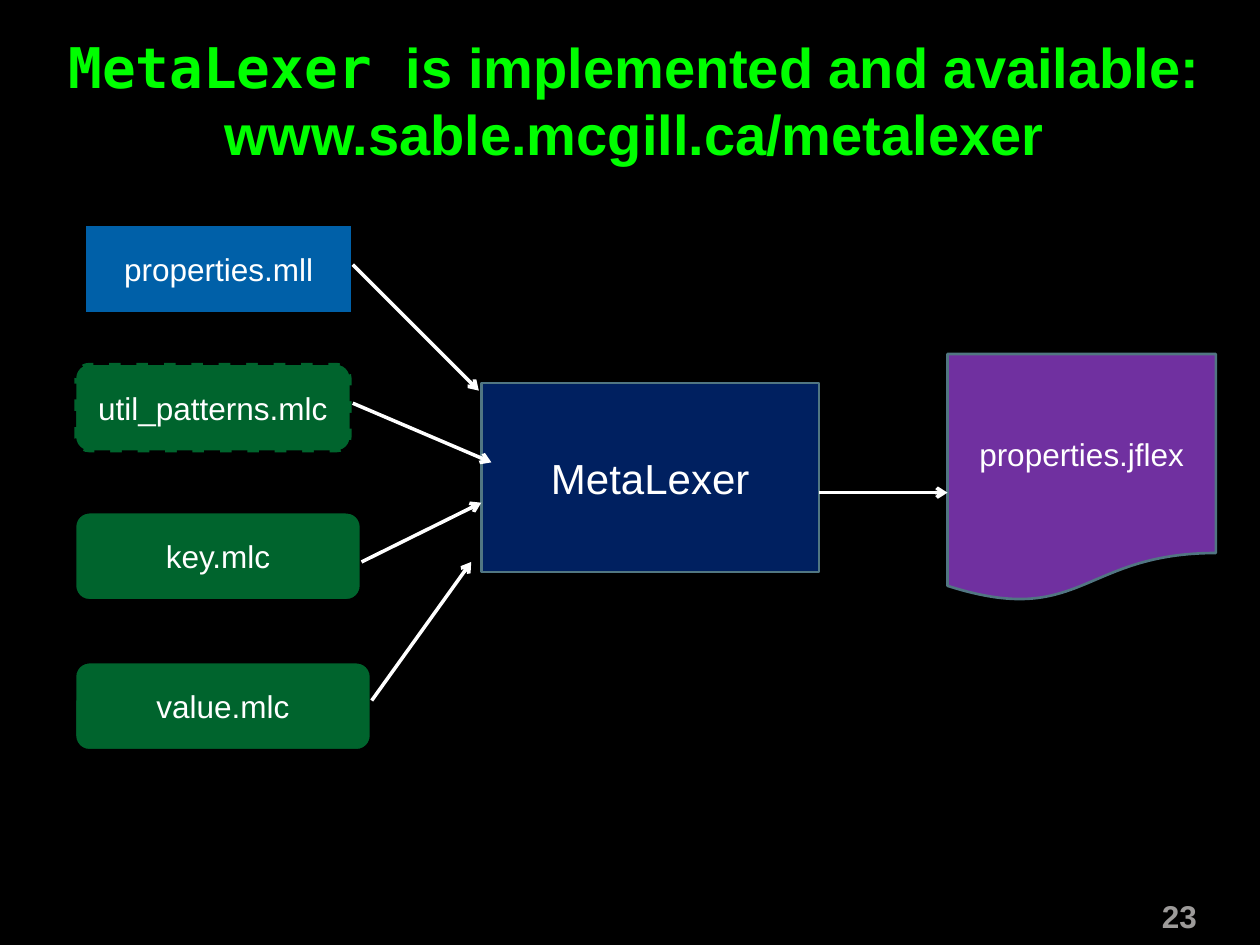
from dataclasses import dataclass

from lxml import etree
from pptx import Presentation
from pptx.dml.color import RGBColor
from pptx.enum.dml import MSO_LINE
from pptx.enum.shapes import MSO_CONNECTOR, MSO_SHAPE
from pptx.enum.text import MSO_ANCHOR, MSO_AUTO_SIZE, PP_ALIGN
from pptx.oxml.ns import qn
from pptx.util import Inches, Pt

RECTANGLE = MSO_SHAPE.RECTANGLE
ROUNDED = MSO_SHAPE.ROUNDED_RECTANGLE
PROCESS = MSO_SHAPE.FLOWCHART_PROCESS
DOCUMENT = MSO_SHAPE.FLOWCHART_DOCUMENT
STRAIGHT = MSO_CONNECTOR.STRAIGHT
DASH = MSO_LINE.DASH
CENTER, RIGHT = PP_ALIGN.CENTER, PP_ALIGN.RIGHT
TOP, MIDDLE, BOTTOM = MSO_ANCHOR.TOP, MSO_ANCHOR.MIDDLE, MSO_ANCHOR.BOTTOM
GROW = MSO_AUTO_SIZE.SHAPE_TO_FIT_TEXT

# The slide is a grid of square cells
COLUMNS, ROWS = 100, 75
CELL = Inches(0.1)


@dataclass(frozen=True)
class Theme:
    font: str = "Arial"
    code_font: str = "DejaVu Sans Mono"
    background: str = "000000"
    title: str = "00FF00"
    page_number: str = "9D9B9A"
    text: str = "FFFFFF"
    layout_file: str = "0060A8"
    component_file: str = "00642D"
    tool: str = "002060"
    output_file: str = "7030A0"
    outline: str = "517682"
    title_size: int = 32
    tool_size: int = 24
    label_size: int = 18
    input_border: float = 2.25
    border: float = 1.5
    arrow: float = 2


THEME = Theme()


def color(value):
    return RGBColor.from_string(value)


def cells(*counts):
    return [round(count * CELL) for count in counts]


def style(paragraph, size, ink, align=CENTER, bold=False):
    paragraph.alignment = align
    font = paragraph.font
    font.name, font.size, font.bold = THEME.font, Pt(size), bold
    font.color.rgb = color(ink)


def add_text_area(slide, area, anchor):
    frame = slide.shapes.add_textbox(*cells(*area)).text_frame
    frame.word_wrap = True
    frame.vertical_anchor = anchor
    return frame


def add_title(slide, name, claim, address):
    frame = add_text_area(slide, (3.5, 2.1, 93.7, 11.8), TOP)
    frame.auto_size = GROW
    headline, link = frame.paragraphs[0], frame.add_paragraph()
    for line in (headline, link):
        style(line, THEME.title_size, THEME.title, bold=True)
    tool_name = headline.add_run()
    tool_name.text = name
    tool_name.font.name = THEME.code_font
    headline.add_run().text = claim
    link.text = address


def add_page_number(slide, number):
    frame = add_text_area(slide, (86.7, 70.2, 8.3, 4), BOTTOM)
    frame.margin_left = frame.margin_right = 0
    frame.margin_top = frame.margin_bottom = 0
    frame.text = number
    style(frame.paragraphs[0], THEME.label_size, THEME.page_number, RIGHT, True)


def add_box(slide, kind, area, label, fill, outline=THEME.outline,
            border=THEME.border, size=THEME.label_size):
    box = slide.shapes.add_shape(kind, *cells(*area))
    box.shadow.inherit = False
    box.fill.solid()
    box.fill.fore_color.rgb = color(fill)
    box.line.color.rgb = color(outline)
    box.line.width = Pt(border)
    frame = box.text_frame
    frame.word_wrap = True
    frame.vertical_anchor = MIDDLE
    frame.text = label
    style(frame.paragraphs[0], size, THEME.text)
    return box


def add_input(slide, kind, left, top, width, label, fill):
    return add_box(slide, kind, (left, top, width, 7.1), label, fill,
                   THEME.background, THEME.input_border)


def add_arrow(slide, start, end):
    arrow = slide.shapes.add_connector(STRAIGHT, *cells(*start, *end))
    arrow.line.color.rgb = color(THEME.text)
    arrow.line.width = Pt(THEME.arrow)
    etree.SubElement(arrow.line._get_or_add_ln(), qn("a:tailEnd"), type="arrow")
    etree.SubElement(arrow._element.spPr, qn("a:effectLst"))


def main():
    deck = Presentation()
    deck.slide_width, deck.slide_height = cells(COLUMNS, ROWS)
    slide = deck.slides.add_slide(deck.slide_layouts[6])
    slide.background.fill.solid()
    slide.background.fill.fore_color.rgb = color(THEME.background)

    add_title(slide, "MetaLexer ", "is implemented and available:",
              "www.sable.mcgill.ca/metalexer")
    add_page_number(slide, "23")

    # Input files: one layout and its components
    add_input(slide, RECTANGLE, 6.7, 17.8, 21.3, "properties.mll",
              THEME.layout_file)
    components = [("util_patterns.mlc", 28.8, 22), ("key.mlc", 40.6, 22.8),
                  ("value.mlc", 52.5, 23.6)]
    patterns, *_ = [
        add_input(slide, ROUNDED, 5.9, top, width, label, THEME.component_file)
        for label, top, width in components
    ]
    patterns.line.dash_style = DASH

    # Tool and the file it generates
    add_box(slide, PROCESS, (38.2, 30.4, 26.8, 15), "MetaLexer", THEME.tool,
            size=THEME.tool_size)
    add_box(slide, DOCUMENT, (75.2, 28.1, 21.3, 19.7), "properties.jflex",
            THEME.output_file)

    # Flow from inputs to tool to output
    flows = [
        ((28, 21), (38, 31)),
        ((28, 32), (39, 36.7)),
        ((28.7, 44.6), (38.2, 39.9)),
        ((29.5, 55.6), (37.4, 44.6)),
        ((65, 39.1), (75.2, 39.1)),
    ]
    for start, end in flows:
        add_arrow(slide, start, end)

    deck.save("out.pptx")


if __name__ == "__main__":
    main()
